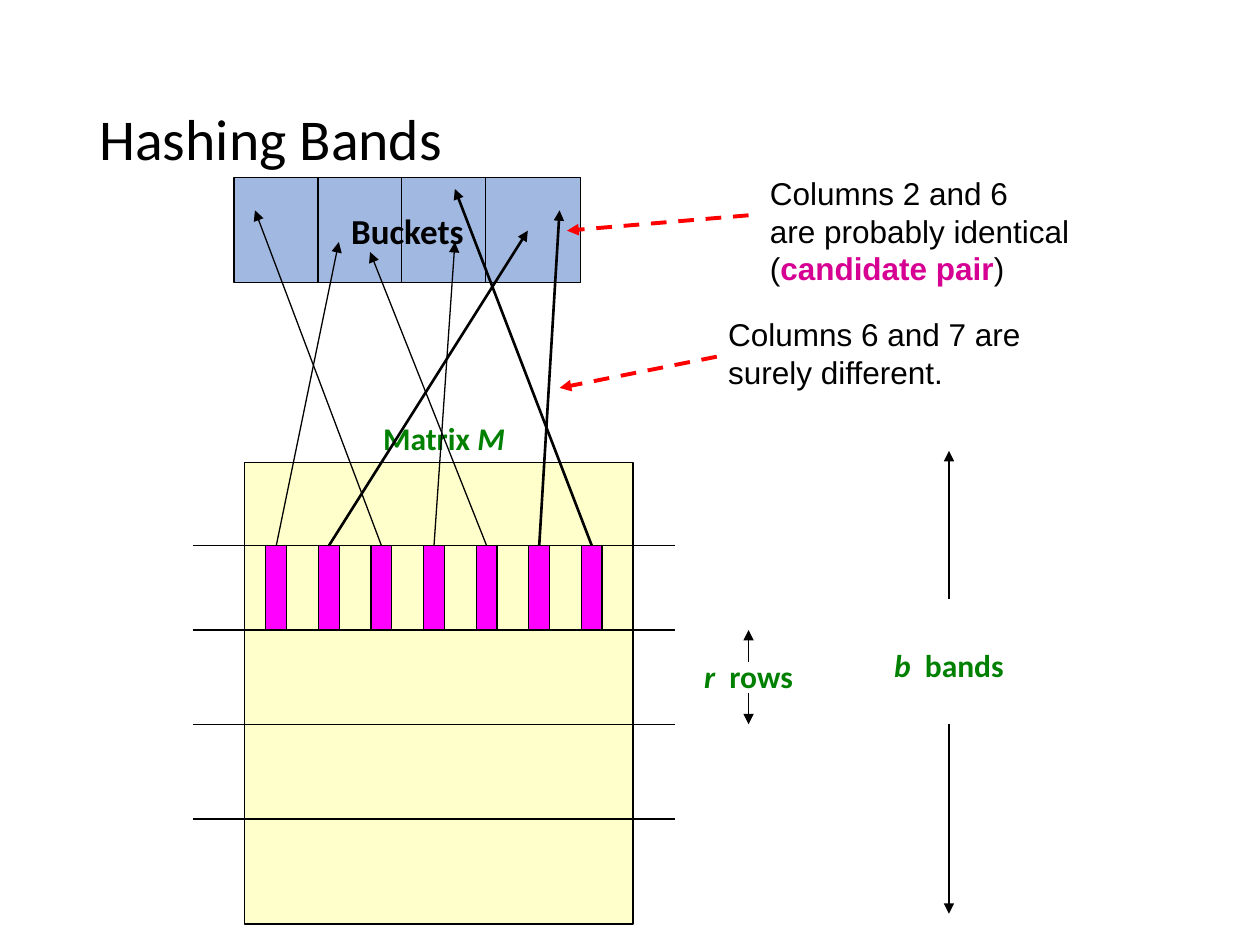
from lxml import etree
from pptx import Presentation
from pptx import util as u
from pptx.dml.color import RGBColor
from pptx.enum import dml, shapes, text
from pptx.oxml.ns import qn

BLACK, GREEN, RED = "000000", "008000", "FF0000"
MAGENTA, PINK = "FF00FF", "D60093"
YELLOW, BLUE = "FFFF99", "4472C4"
LABEL = {"name": "Calibri", "size": u.Pt(18), "bold": True}
NOTE = {"name": "Arial", "size": u.Pt(18), "bold": False}

STRIPE_COUNT = 7
# Arrow tips inside the bucket box, one for each stripe: x, y, line width
HASH_TARGETS = [
    (2.11, 1.3, 0.75), (5.92, 1.07, 1.5), (0.42, 0.66, 0.75), (4.45, 1.3, 0.75),
    (2.74, 1.5, 0.75), (6.56, 0.66, 1.5), (4.45, 0.23, 1.5),
]


def color(value):
    return RGBColor.from_string(value)


def add_run(paragraph, words, ink, font, **changes):
    run = paragraph.add_run()
    run.text = words
    for name, value in {**font, **changes}.items():
        setattr(run.font, name, value)
    run.font.color.rgb = color(ink)


def add_box(slide, left, top, width, height, fill, alpha=None):
    shape = slide.shapes.add_shape(
        shapes.MSO_SHAPE.RECTANGLE, u.Cm(left), u.Cm(top), u.Cm(width), u.Cm(height))
    shape.shadow.inherit = False
    shape.fill.solid()
    shape.fill.fore_color.rgb = color(fill)
    if alpha:
        solid = shape.fill._xPr.find(qn("a:solidFill"))
        etree.SubElement(solid[0], qn("a:alpha"), val=str(alpha * 1000))
    shape.line.color.rgb = color(BLACK)
    shape.line.width = u.Pt(0.75)
    return shape


def add_line(slide, start, end, ink=BLACK, width=0.75, arrow=False, dashed=False):
    line = slide.shapes.add_connector(
        shapes.MSO_CONNECTOR.STRAIGHT, *(u.Cm(value) for value in (*start, *end)))
    line.line.color.rgb = color(ink)
    line.line.width = u.Pt(width)
    if dashed:
        line.line.dash_style = dml.MSO_LINE.DASH
    if arrow:
        etree.SubElement(line.line._get_or_add_ln(), qn("a:tailEnd"), type="triangle")
    etree.SubElement(line._element.spPr, qn("a:effectLst"))
    return line


def add_text(slide, left, top, width, height, wrap):
    box = slide.shapes.add_textbox(u.Cm(left), u.Cm(top), u.Cm(width), u.Cm(height))
    box.text_frame.word_wrap = wrap
    return box.text_frame


def add_label(slide, left, top, width, runs):
    """Place a green label whose runs are (words, italic) pairs."""
    paragraph = add_text(slide, left, top, width, 1.02, False).paragraphs[0]
    paragraph.alignment = text.PP_ALIGN.CENTER
    for words, italic in runs:
        add_run(paragraph, words, GREEN, LABEL, italic=italic)


def add_title(slide, left, top, width, height):
    title = slide.shapes.title
    title.left, title.top = u.Cm(left), u.Cm(top)
    title.width, title.height = u.Cm(width), u.Cm(height)
    title.text_frame.vertical_anchor = text.MSO_ANCHOR.MIDDLE
    paragraph = title.text_frame.paragraphs[0]
    paragraph.alignment = text.PP_ALIGN.LEFT
    paragraph.line_spacing = 0.9
    add_run(paragraph, "Hashing Bands", BLACK, {"name": "Calibri", "size": u.Pt(33)})


def add_matrix(slide, left, top, width, height):
    """Draw the matrix with its bands and return the stripes of one band."""
    add_box(slide, left, top, width, height, YELLOW, alpha=50)
    add_label(slide, left + 2.52, top - 0.99, 3, [("Matrix ", False), ("M", True)])
    for offset in (1.68, 3.38, 5.28, 7.19):
        y = top + offset
        add_line(slide, (left - 1.04, y), (left + width + 0.85, y))
    return [add_box(slide, left + 0.43 + 1.06 * index, top + 1.68, 0.42, 1.7, MAGENTA)
            for index in range(STRIPE_COUNT)]


def add_buckets(slide, left, top, width, height):
    box = add_box(slide, left, top, width, height, BLUE, alpha=50)
    box.text_frame.word_wrap = False
    box.text_frame.vertical_anchor = text.MSO_ANCHOR.MIDDLE
    paragraph = box.text_frame.paragraphs[0]
    paragraph.alignment = text.PP_ALIGN.CENTER
    add_run(paragraph, "Buckets", BLACK, LABEL, size=u.Pt(20))
    for index in range(1, 4):
        x = left + 1.69 * index
        add_line(slide, (x, top), (x, top + height))


def add_hash_arrows(slide, stripes, left, top):
    """Link each stripe to its place in the bucket box at left, top."""
    for stripe, (x, y, width) in zip(stripes, HASH_TARGETS):
        arrow = add_line(slide, (0, 0), (left + x, top + y), width=width, arrow=True)
        arrow.begin_connect(stripe, 0)


def add_measure(slide, x, top, bottom, gap, label_top, label_width, runs):
    """Draw arrows from the gap up to top and down to bottom, with a label between."""
    for start, end in zip(gap, (top, bottom)):
        add_line(slide, (x, start), (x, end), arrow=True)
    add_label(slide, x - label_width / 2, label_top, label_width, runs)


def add_note(slide, left, top, width, height, lines, start, end):
    """Place note lines of (words, colour, bold) runs and a dashed red arrow."""
    frame = add_text(slide, left, top, width, height, False)
    for index, runs in enumerate(lines):
        paragraph = frame.add_paragraph() if index else frame.paragraphs[0]
        for words, ink, bold in runs:
            add_run(paragraph, words, ink, NOTE, bold=bold)
    add_line(slide, start, end, RED, 2.25, arrow=True, dashed=True)


def main():
    presentation = Presentation()
    presentation.slide_width, presentation.slide_height = u.Cm(25.4), u.Cm(19.05)
    slide = presentation.slides.add_slide(presentation.slide_layouts[5])

    add_title(slide, 1.75, 1.02, 21.89, 3.68)
    stripes = add_matrix(slide, 4.93, 9.32, 7.83, 9.31)
    add_measure(slide, 15.09, 12.7, 14.6, (13.34, 13.97), 13.13, 2.34,
                [("r ", True), (" rows", False)])
    add_measure(slide, 19.13, 9.09, 18.42, (12.07, 14.6), 12.9, 2.77,
                [("b ", True), (" bands", False)])
    add_buckets(slide, 4.72, 3.58, 6.99, 2.12)
    add_hash_arrows(slide, stripes, 4.72, 3.58)
    add_note(slide, 15.27, 3.38, 6.76, 2.54,
             [[("Columns 2 and 6", BLACK, False)],
              [("are probably identical", BLACK, False)],
              [("(", BLACK, False), ("candidate pair", PINK, True), (")", BLACK, False)]],
             (15.09, 4.34), (11.43, 4.65))
    add_note(slide, 14.43, 6.22, 6.45, 1.8,
             [[("Columns 6 and 7 are", BLACK, False)],
              [("surely different.", BLACK, False)]],
             (14.45, 7.19), (11.28, 7.82))

    presentation.save("out.pptx")


if __name__ == "__main__":
    main()
